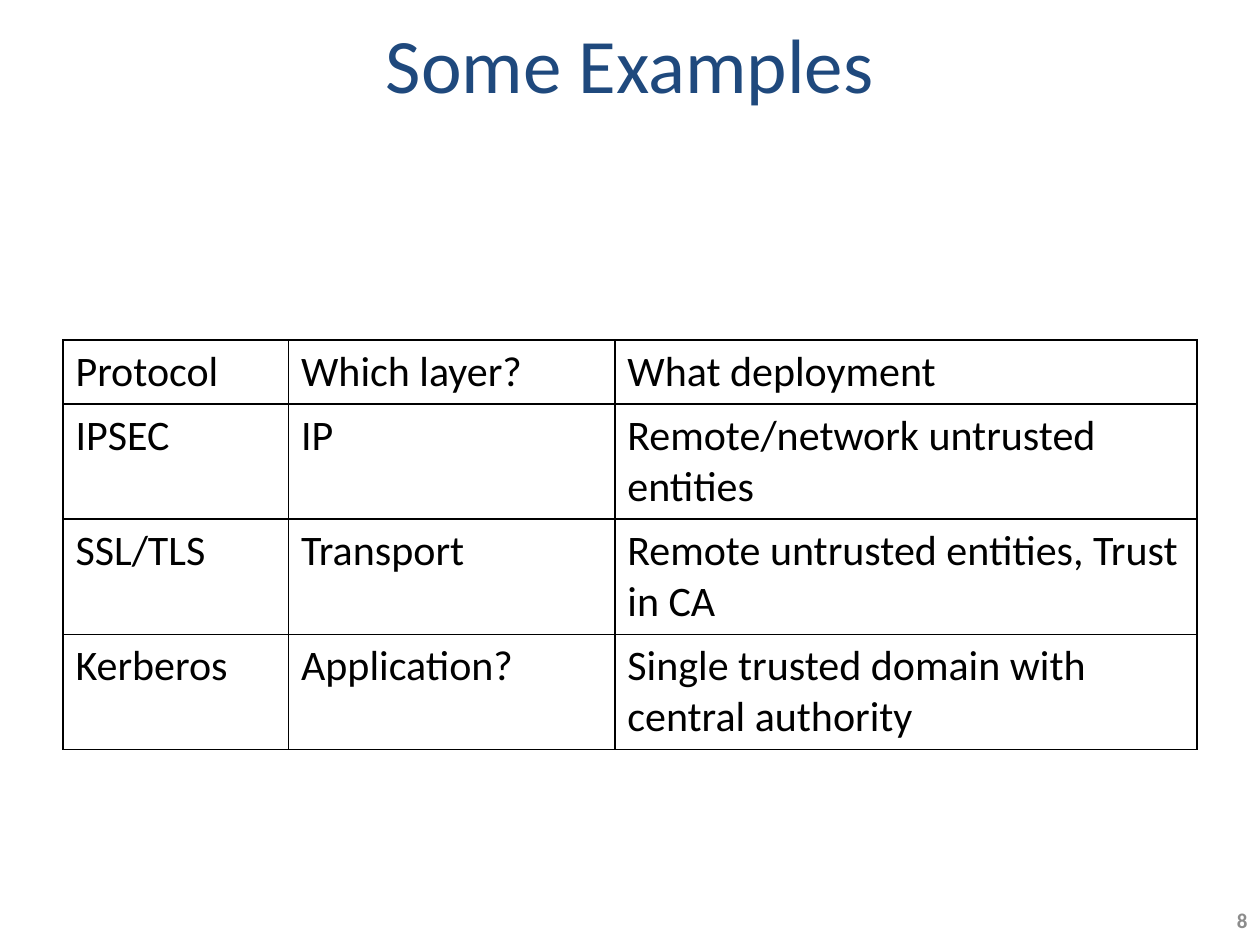
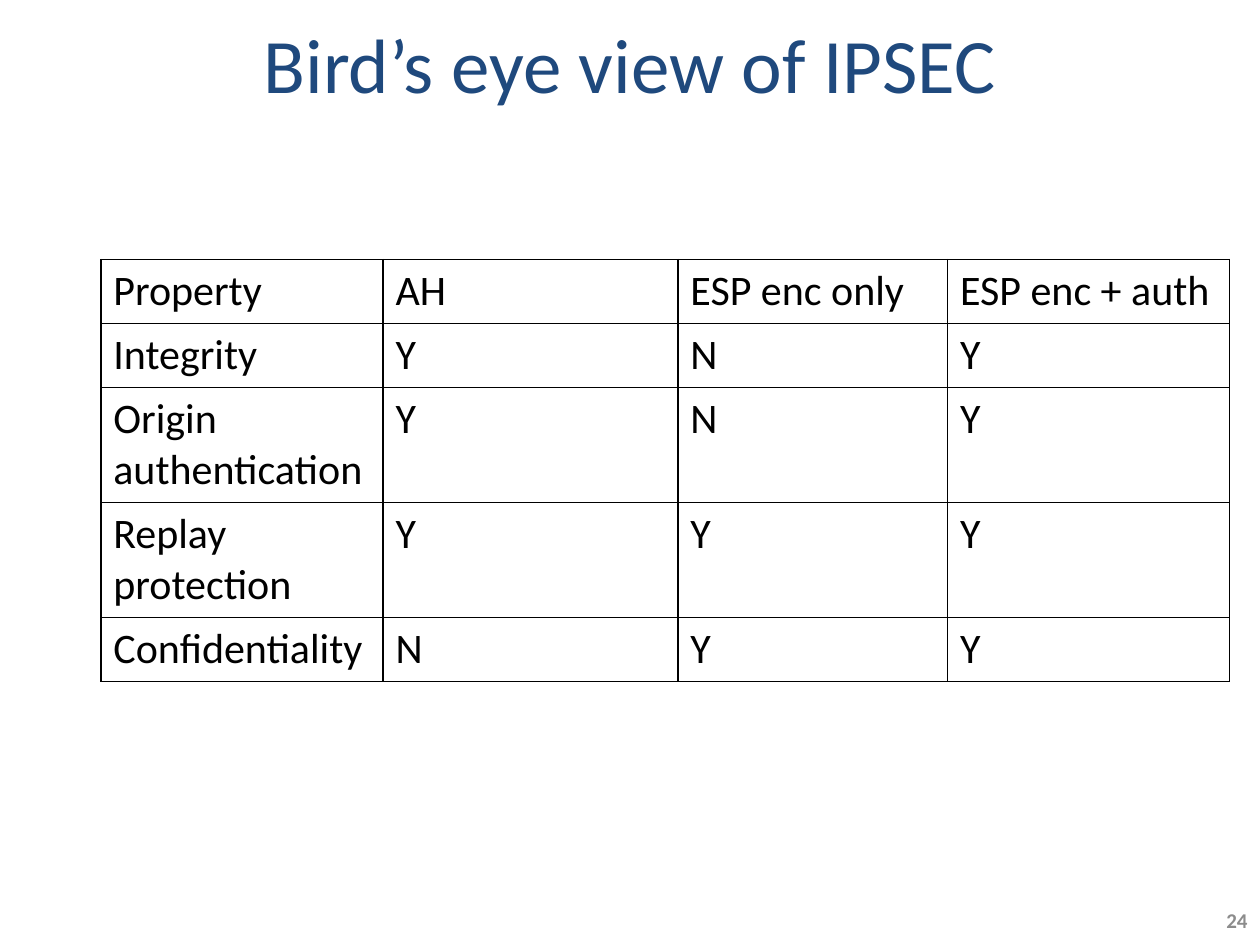
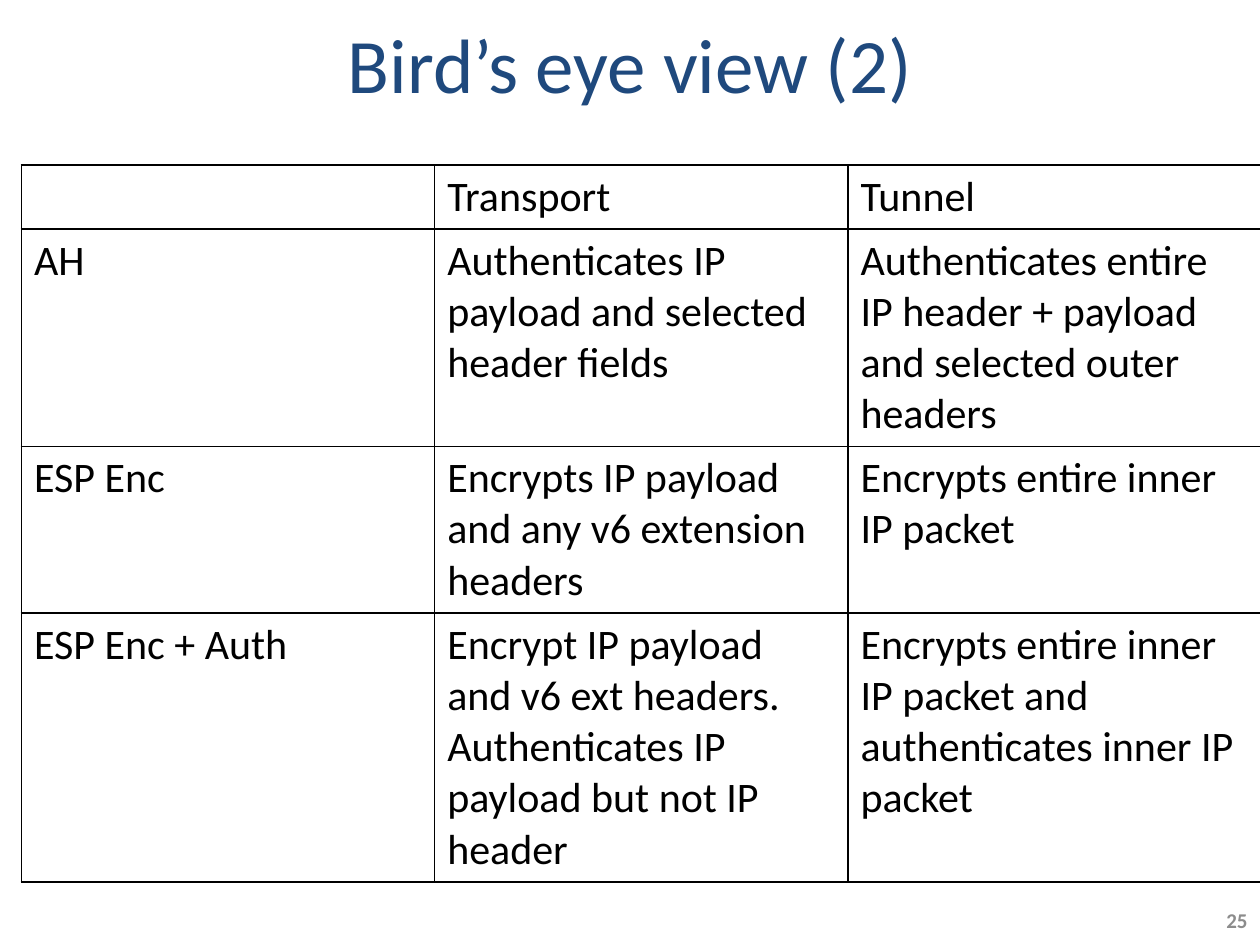
from lxml import etree
from pptx import Presentation
from pptx.dml.color import RGBColor
from pptx.enum.text import MSO_ANCHOR, PP_ALIGN
from pptx.oxml.ns import qn
from pptx.util import Inches, Pt

CENTER, RIGHT = PP_ALIGN.CENTER, PP_ALIGN.RIGHT
MIDDLE = MSO_ANCHOR.MIDDLE

NAVY = RGBColor(0x1F, 0x49, 0x7D)
BLACK = RGBColor(0x00, 0x00, 0x00)
GRAY = RGBColor(0x8C, 0x8C, 0x8C)
FONT = "Calibri"
TITLE_ONLY = 5

# Row height: one line of text, plus the cell's top and bottom margins
LINE_HEIGHT, CELL_MARGINS = 0.4, 0.1

# Content: each row is (lines of text it needs, cells)
SLIDES = [
    {
        "title": "Some Examples", "number": "8",
        "corner": (0.5, 2.7), "columns": (1.79, 2.59, 4.62),
        "rows": [
            (1, ("Protocol", "Which layer?", "What deployment")),
            (2, ("IPSEC", "IP", "Remote/network untrusted entities")),
            (2, ("SSL/TLS", "Transport",
                 "Remote untrusted entities, Trust in CA")),
            (2, ("Kerberos", "Application?",
                 "Single trusted domain with central authority")),
        ],
    },
    {
        "title": "Bird’s eye view of IPSEC", "number": "24",
        "corner": (0.8, 2.06), "columns": (2.24, 2.34, 2.14, 2.24),
        "rows": [
            (1, ("Property", "AH", "ESP enc only", "ESP enc + auth")),
            (1, ("Integrity", "Y", "N", "Y")),
            (2, ("Origin\nauthentication", "Y", "N", "Y")),
            (2, ("Replay protection", "Y", "Y", "Y")),
            (1, ("Confidentiality", "N", "Y", "Y")),
        ],
    },
    {
        "title": "Bird’s eye view (2)", "number": "25",
        "corner": (0.17, 1.31), "columns": (3.28, 3.28, 3.28),
        "rows": [
            (1, ("", "Transport", "Tunnel")),
            (4, ("AH",
                 "Authenticates IP payload and selected header fields",
                 "Authenticates entire IP header + payload and selected "
                 "outer headers")),
            (3, ("ESP Enc",
                 "Encrypts IP payload and any v6 extension headers",
                 "Encrypts entire inner IP packet")),
            (5, ("ESP Enc + Auth",
                 "Encrypt IP payload and v6 ext headers. Authenticates IP "
                 "payload but not IP header",
                 "Encrypts entire inner IP packet and authenticates inner "
                 "IP packet")),
        ],
    },
]


def write(frame, text, size, color, align=None, bold=False):
    """Write each line of text as a paragraph with one run."""
    for i, line in enumerate(text.split("\n")):
        paragraph = frame.add_paragraph() if i else frame.paragraphs[0]
        paragraph.alignment = align
        if line:
            run = paragraph.add_run()
            run.text = line
            run.font.name, run.font.size = FONT, Pt(size)
            run.font.bold = bold
            run.font.color.rgb = color


def add_title(slide, text):
    title = slide.shapes.title
    title.left, title.top = Inches(0.5), Inches(0)
    title.width, title.height = Inches(9), Inches(1)
    title.text_frame.vertical_anchor = MIDDLE
    write(title.text_frame, text, 44, NAVY, CENTER)


def add_page_number(slide, number):
    box = slide.shapes.add_textbox(
        Inches(9.31), Inches(7.1), Inches(0.69), Inches(0.4))
    box.text_frame.word_wrap = True
    box.text_frame.vertical_anchor = MIDDLE
    write(box.text_frame, number, 12, GRAY, RIGHT, bold=True)


def draw_borders(cell):
    properties = cell._tc.get_or_add_tcPr()
    for side in ("a:lnL", "a:lnR", "a:lnT", "a:lnB"):
        line = etree.SubElement(properties, qn(side), w=str(Pt(1)))
        fill = etree.SubElement(line, qn("a:solidFill"))
        etree.SubElement(fill, qn("a:srgbClr"), val=str(BLACK))


def add_grid(slide, corner, columns, rows):
    heights = [lines * LINE_HEIGHT + CELL_MARGINS for lines, _ in rows]
    left, top = corner
    table = slide.shapes.add_table(
        len(rows), len(columns), Inches(left), Inches(top),
        Inches(sum(columns)), Inches(sum(heights))).table
    table.first_row = table.horz_banding = False
    for column, width in zip(table.columns, columns):
        column.width = Inches(width)
    for row, height, (_, texts) in zip(table.rows, heights, rows):
        row.height = Inches(height)
        for cell, text in zip(row.cells, texts):
            draw_borders(cell)
            cell.fill.background()
            write(cell.text_frame, text, 24, BLACK)


def main():
    deck = Presentation()
    deck.slide_width, deck.slide_height = Inches(10), Inches(7.5)
    for content in SLIDES:
        slide = deck.slides.add_slide(deck.slide_layouts[TITLE_ONLY])
        add_title(slide, content["title"])
        add_grid(slide, content["corner"], content["columns"], content["rows"])
        add_page_number(slide, content["number"])
    deck.save("out.pptx")


if __name__ == "__main__":
    main()
